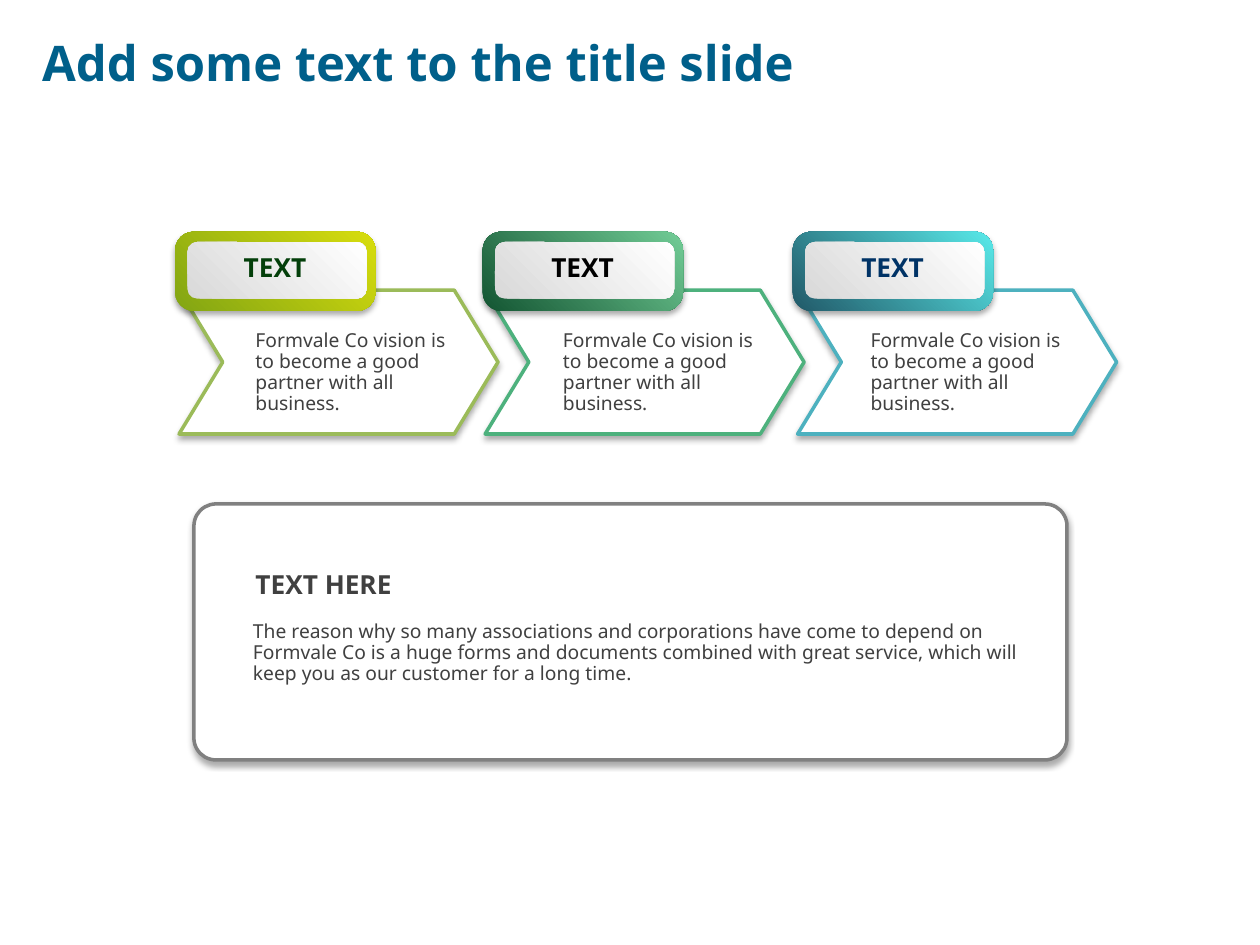
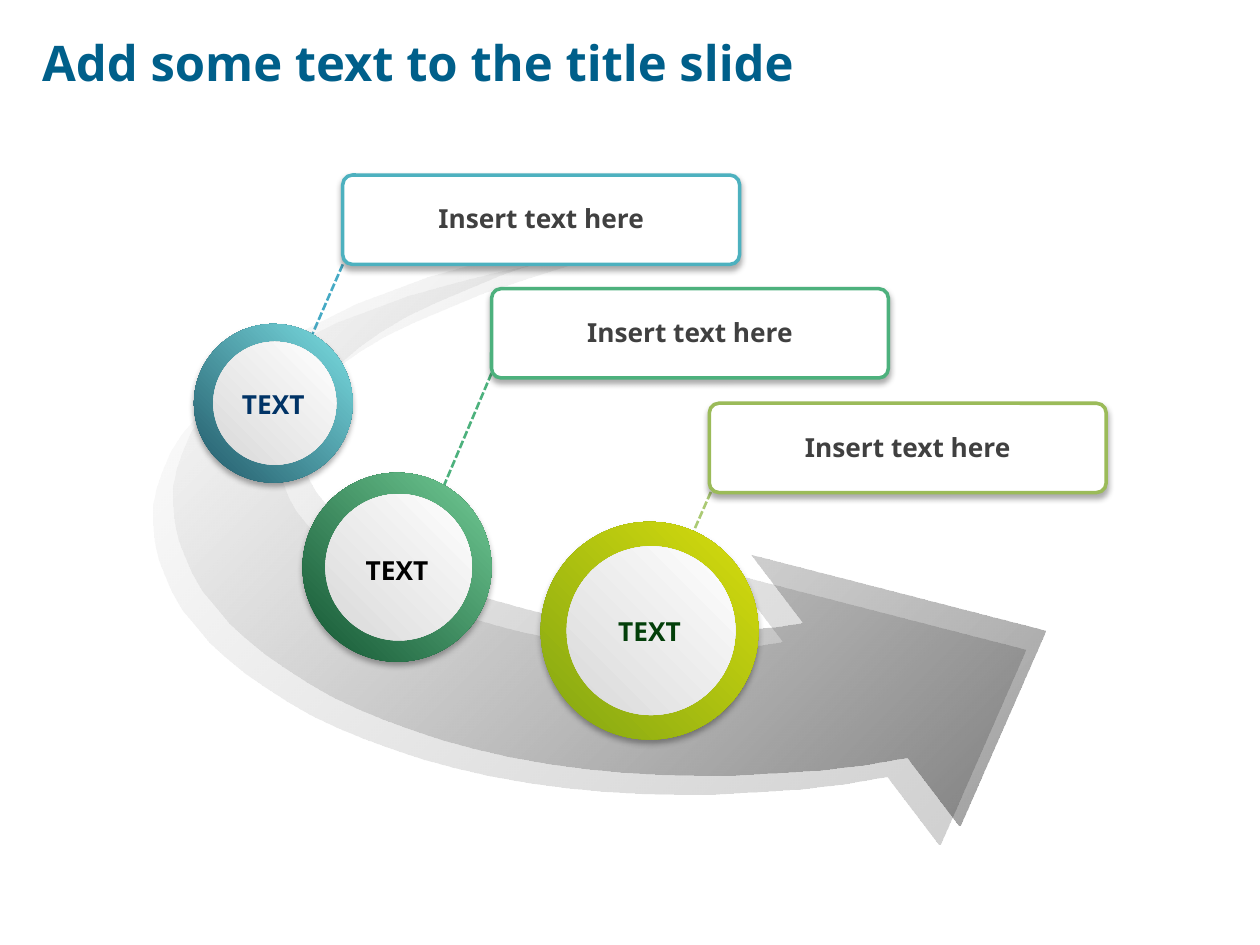
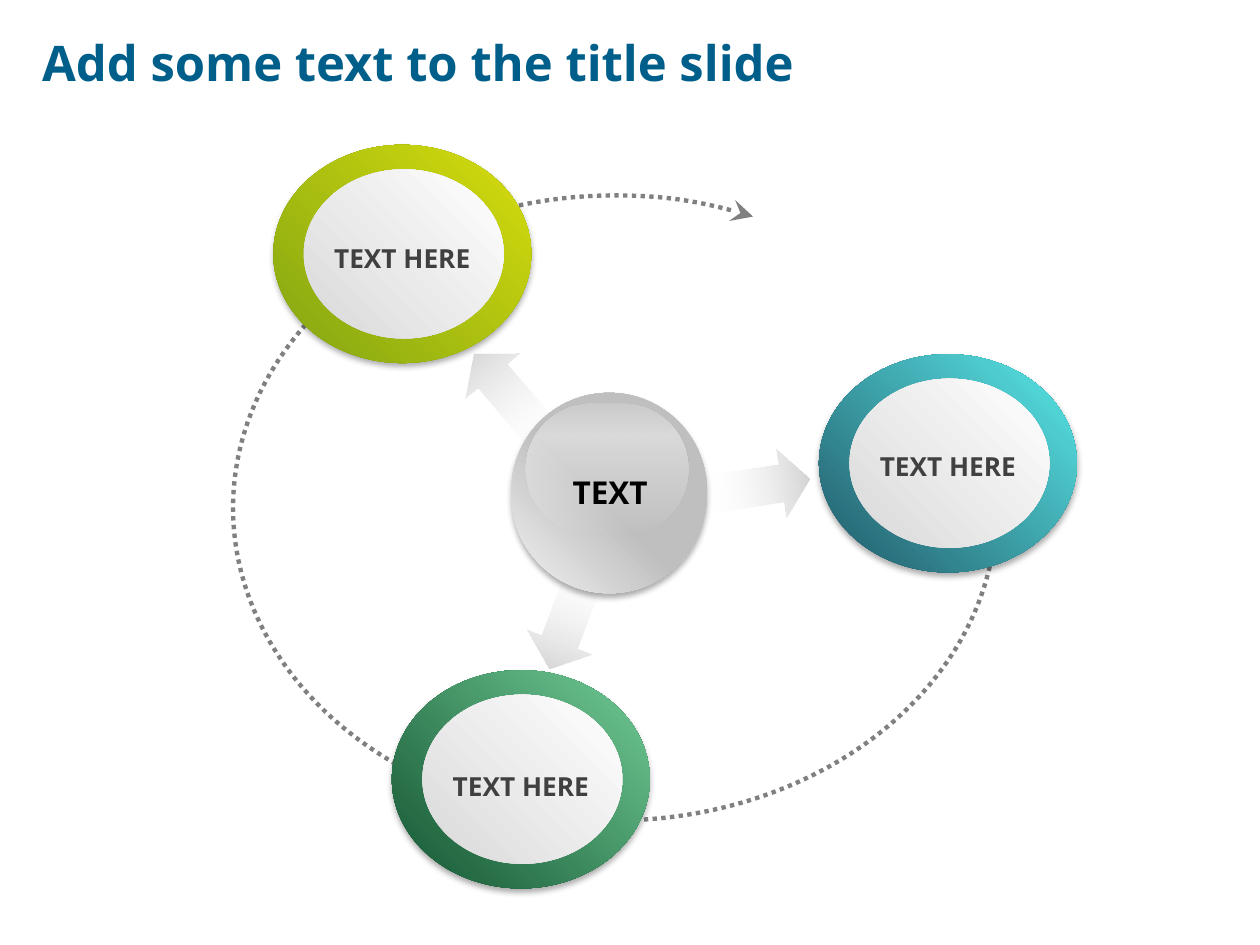
"""Build three diagram slides: chevron steps, a swooping arrow and a cycle."""
from lxml import etree
from pptx import Presentation
from pptx import util as u
from pptx.dml.color import RGBColor
from pptx.enum import shapes, text
from pptx.enum.dml import MSO_LINE
from pptx.oxml.ns import qn

FONT = "Noto Sans"
TITLE = "Add some text to the title slide"
COLORS = {
    "title": "005F8A", "body": "404040", "black": "000000", "white": "FFFFFF",
    "gray": "808080", "lime": "9BBB59", "green": "4DB17D", "teal": "4DB1BF",
    "lime dash": "ABCA74", "teal dash": "46AAC5",
    "lime ink": "033F0A", "green ink": "000000", "teal ink": "003366",
}
FADES = {
    "lime": [(0, "82A513"), (100, "D8DD0D")],
    "green": [(0, "135532"), (100, "72CC96")],
    "teal": [(0, "215968"), (100, "59E9E9")],
    "pale teal": [(0, "215968"), (100, "7CDFE4")],
    "plate": [(0, "D9D9D9"), (100, "FFFFFF")],
    "ball": [(0, "F2F2F2"), (47, "BFBFBF")],
    "gloss": [(0, "FFFFFF", 0), (76, "FFFFFF", 42), (100, "FFFFFF", 17)],
    "swoosh": [(0, "808080", 0), (100, "000000", 39)],
    "arrow": [(0, "000000", 20), (100, "FFFFFF", 0)],
}
SOFT = (32, 3.5, 2.2, 90)
CAST = (50, 0, 16.3, 137)

STEP = "Formvale Co vision is to become a good partner with all business."
STEPS = [("lime", 3.61, 3.53), ("green", 9.78, 9.73), ("teal", 16.08, 15.98)]
REASON = ("The reason why so many associations and corporations have come to depend on "
          "Formvale Co is a huge forms and documents combined with great service, "
          "which will keep you as our customer for a long time.")

CARDS = [("teal", 6.91, 3.53), ("green", 9.91, 5.82), ("lime", 14.3, 8.13)]
DASHES = [("lime dash", 14.5, 9.53, 13.89, 10.92), ("green", 9.91, 7.52, 8.89, 9.93),
          ("teal dash", 6.91, 5.33, 6.3, 6.73)]
BALLS = [("lime", "lime ink", 10.9, 10.52, 4.39, 0), ("green", "green ink", 6.1, 9.53, 3.81, 0.06),
         ("pale teal", "teal ink", 3.91, 6.53, 3.2, 0.02)]
SWOOSH = [
    (443, 194), (406, 202), (371, 211), (339, 220), (310, 231), (283, 241), (259, 253),
    (237, 264), (217, 277), (200, 289), (185, 302), (172, 316), (161, 329), (152, 343),
    (146, 357), (141, 371), (138, 385), (138, 400), (139, 414), (142, 428), (147, 441),
    (153, 455), (161, 469), (172, 482), (183, 495), (196, 507), (211, 519), (227, 530),
    (244, 541), (263, 552), (284, 562), (306, 571), (328, 579), (352, 587), (378, 594),
    (404, 600), (432, 605), (460, 609), (490, 612), (520, 614), (551, 615), (584, 615),
    (617, 613), (651, 611), (685, 607), (720, 601), (761, 655), (762, 655), (830, 500),
    (596, 440), (637, 494), (618, 497), (597, 499), (576, 500), (555, 501), (534, 500),
    (513, 499), (492, 497), (470, 494), (450, 490), (429, 486), (410, 481), (390, 475),
    (371, 469), (354, 462), (336, 454), (320, 447), (306, 438), (292, 429), (280, 420),
    (268, 410), (259, 400), (251, 390), (245, 379), (241, 368), (238, 357), (238, 346),
    (240, 334), (244, 323), (251, 311), (259, 300), (271, 288), (285, 276), (302, 264),
    (322, 252), (345, 241), (371, 230), (400, 218), (433, 207), (468, 196),
]

ARROWS = [(9.19, 7.19, 230), (14.3, 9.09, 351.3), (10.41, 11.81, 110.7)]
RINGS = [("lime", 5.51, 2.92, 0.08), ("green", 7.9, 13.51, 0.13), ("teal", 16.51, 7.14, 0.06)]

KIND = shapes.MSO_SHAPE


def rgb(name):
    return RGBColor.from_string(COLORS[name])


def fade(shape, name, angle):
    shape.fill.gradient()
    shape.fill.gradient_angle = 360 - angle
    stops = shape._element.spPr.find(qn("a:gradFill")).find(qn("a:gsLst"))
    stops.clear()
    for pos, tint, *alpha in FADES[name]:
        stop = etree.SubElement(stops, qn("a:gs"), pos=str(pos * 1000))
        color = etree.SubElement(stop, qn("a:srgbClr"), val=tint)
        for part in alpha:
            etree.SubElement(color, qn("a:alpha"), val=str(part * 1000))


def style(shape, fill=None, line=None, angle=315, shade=None):
    if fill in FADES:
        fade(shape, fill, angle)
    else:
        shape.fill.solid()
        shape.fill.fore_color.rgb = rgb("white")
    if line:
        shape.line.color.rgb = rgb(line)
        shape.line.width = u.Pt(2)
    else:
        shape.line.fill.background()
    shape.shadow.inherit = False
    if shade:
        alpha, blur, dist, turn = shade
        effects = shape._element.spPr.find(qn("a:effectLst"))
        outer = etree.SubElement(effects, qn("a:outerShdw"), blurRad=str(u.Pt(blur)),
                                 dist=str(u.Pt(dist)), dir=str(turn * 60000),
                                 algn="ctr", rotWithShape="0")
        color = etree.SubElement(outer, qn("a:srgbClr"), val=COLORS["black"])
        etree.SubElement(color, qn("a:alpha"), val=str(alpha * 1000))
    return shape


def draw(slide, kind, place, adjust=(), **look):
    shape = slide.shapes.add_shape(kind, *map(u.Cm, place))
    for i, value in enumerate(adjust):
        shape.adjustments[i] = value
    return style(shape, **look)


def write(slide, words, place, size=15, color="body", bold=True, center=True,
          middle=False, space=None):
    frame = slide.shapes.add_textbox(*map(u.Cm, place)).text_frame
    frame.word_wrap = True
    frame.vertical_anchor = text.MSO_ANCHOR.MIDDLE if middle else text.MSO_ANCHOR.TOP
    para = frame.paragraphs[0]
    para.text = words
    para.alignment = text.PP_ALIGN.CENTER if center else text.PP_ALIGN.LEFT
    if space:
        para.line_spacing = u.Pt(space)
    font = para.font
    font.name, font.size, font.bold = FONT, u.Pt(size), bold
    font.color.rgb = rgb(color)


def prose(slide, words, place, **more):
    write(slide, words, place, size=11, bold=False, center=False, space=12, **more)


def ring(slide, tint, words, x, y, w, h, drop, ink="body"):
    draw(slide, KIND.OVAL, (x, y, w, h), fill=tint, shade=SOFT)
    wide, high = w * 0.775, h * 0.775
    draw(slide, KIND.OVAL, (x + (w - wide) / 2 + 0.03, y + (h - high) / 2, wide, high),
         fill="plate")
    write(slide, words, (x + w / 2 - 1.78, y + h / 2 - 0.44 + drop, 3.56, 0.89), color=ink)


def dash(slide, color, *ends):
    line = slide.shapes.add_connector(shapes.MSO_CONNECTOR.STRAIGHT, *map(u.Cm, ends))
    line.line.color.rgb = rgb(color)
    line.line.width = u.Pt(1.5)
    line.line.dash_style = MSO_LINE.SQUARE_DOT
    line.line._get_or_add_ln().find(qn("a:prstDash")).set("val", "sysDash")
    etree.SubElement(line._element.spPr, qn("a:effectLst"))


def add_page(deck):
    slide = deck.slides.add_slide(deck.slide_layouts[6])
    write(slide, TITLE, (0.6, 0.15, 23.7, 2.21), size=28, color="title",
          center=False, middle=True)
    return slide


def add_steps(slide):
    for i, (name, left, x) in enumerate(STEPS):
        draw(slide, KIND.CHEVRON, (left, 5.85, 6.43, 2.9), [0.304], line=name, shade=SOFT)
        draw(slide, KIND.ROUNDED_RECTANGLE, (x, 4.67, 4.04, 1.6), [0.235],
             fill=name, shade=SOFT)
        draw(slide, KIND.ROUNDED_RECTANGLE, (x + 0.25, 4.88, 3.61, 1.14), [0.17], fill="plate")
        write(slide, "TEXT", (x + 0.76, 4.95, 2.51, 0.89), color=name + " ink")
        prose(slide, STEP, (4.9 + 6.2 * i, 6.53, 4.5, 1.96), middle=True)
    draw(slide, KIND.ROUNDED_RECTANGLE, (3.91, 10.16, 17.6, 5.16), [0.086],
         line="gray", shade=SOFT)
    write(slide, "TEXT HERE", (4.9, 11.33, 5.1, 0.89), center=False)
    prose(slide, REASON, (4.85, 12.4, 16.61, 1.55))


def add_swoosh(slide):
    for row in DASHES:
        dash(slide, *row)
    pen = slide.shapes.build_freeform(*SWOOSH[0], scale=u.Cm(0.0254))
    pen.add_line_segments(SWOOSH[1:], close=True)
    style(pen.convert_to_shape(), fill="swoosh", angle=45, shade=CAST)
    for tint, ink, x, y, size, drop in BALLS:
        ring(slide, tint, "TEXT", x, y, size, size, drop, ink)
    for name, x, y in CARDS:
        draw(slide, KIND.ROUNDED_RECTANGLE, (x, y, 8, 1.8), [0.107], line=name, shade=SOFT)
        write(slide, "Insert text here", (x, y + 0.43, 8, 0.89))


def add_cycle(slide):
    arc = draw(slide, KIND.ARC, (4.7, 3.94, 15.39, 12.6), [215.04, 177.23], line="gray")
    arc.fill.background()
    arc.line.width = u.Pt(2.5)
    arc.line.dash_style = MSO_LINE.ROUND_DOT
    etree.SubElement(arc.line._get_or_add_ln(), qn("a:tailEnd"), type="stealth",
                     w="lg", len="lg")
    for x, y, turn in ARROWS:
        arrow = draw(slide, KIND.RIGHT_ARROW, (x, y, 2.03, 1.42), [0.54, 0.414],
                     fill="arrow", angle=180)
        arrow.rotation = turn
    for name, x, y, drop in RINGS:
        ring(slide, name, "TEXT HERE", x, y, 5.2, 4.4, drop)
    draw(slide, KIND.ROUNDED_RECTANGLE, (10.31, 7.92, 3.94, 4.04), [0.5],
         fill="ball", shade=SOFT)
    draw(slide, KIND.ROUNDED_RECTANGLE, (10.59, 8.13, 3.28, 2.64), [0.5],
         fill="gloss", angle=270)
    write(slide, "TEXT", (10.8, 9.42, 3, 1.02), size=18, color="black")


def main():
    deck = Presentation()
    deck.slide_width, deck.slide_height = u.Cm(25.4), u.Cm(19.05)
    for fill_page in (add_steps, add_swoosh, add_cycle):
        fill_page(add_page(deck))
    deck.save("out.pptx")


if __name__ == "__main__":
    main()
